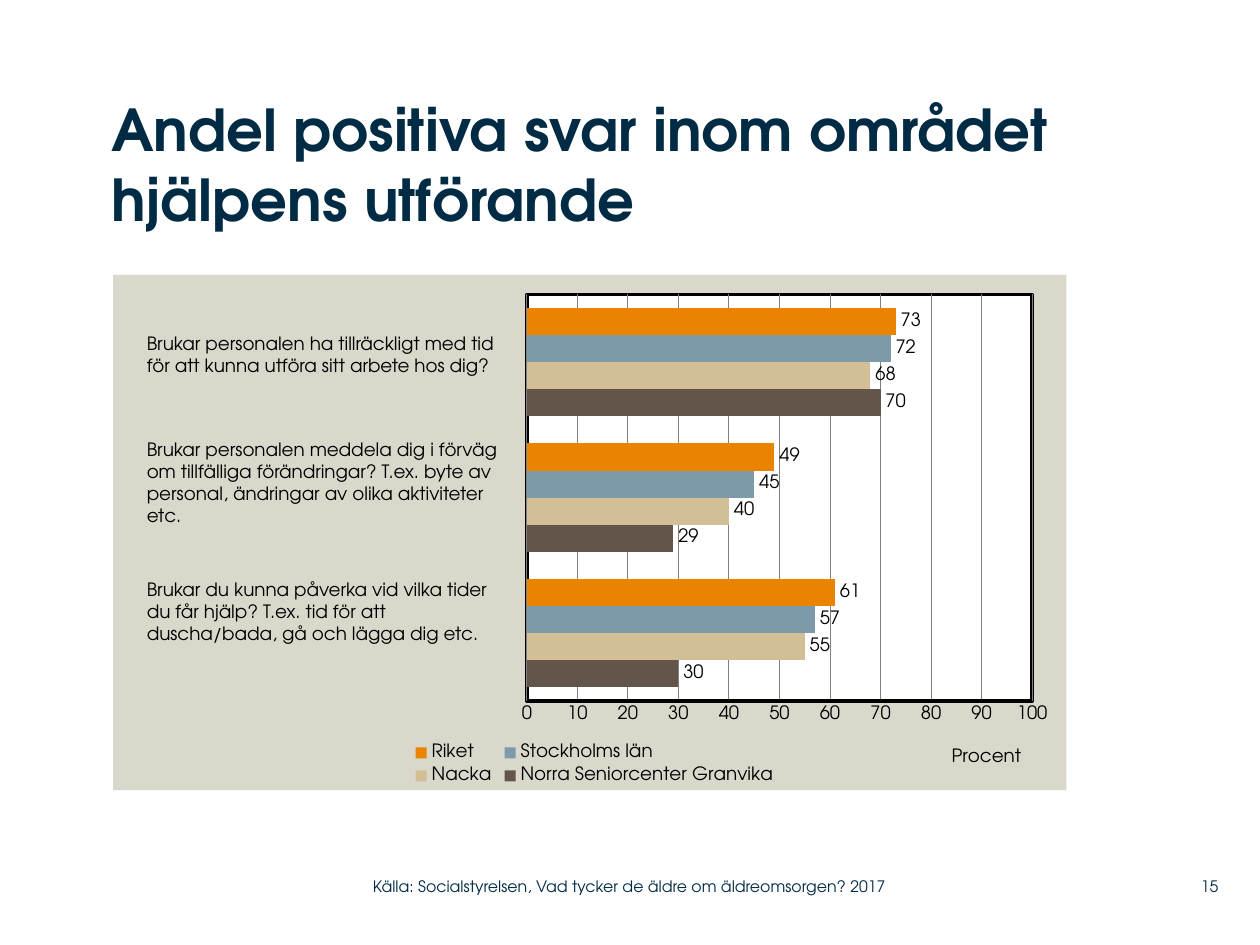
from lxml import etree
from pptx import Presentation
from pptx.chart.data import CategoryChartData
from pptx.dml.color import RGBColor
from pptx.enum.chart import XL_CHART_TYPE, XL_LABEL_POSITION, XL_LEGEND_POSITION, XL_TICK_MARK
from pptx.enum.text import MSO_ANCHOR, PP_ALIGN
from pptx.oxml import parse_xml
from pptx.oxml.ns import nsdecls, qn
from pptx.util import Cm, Pt

FONT = "TeX Gyre Adventor"
COLORS = {
    "navy": "002B45", "black": "000000", "white": "FFFFFF", "panel": "DAD7CB",
    "grid": "808080", "brown": "635549", "sand": "D3BF96", "blue": "7D9AAA",
    "orange": "E98300",
}
TITLE = "Andel positiva svar inom området hjälpens utförande"
CATEGORIES = ["1", "2", "3"]
SERIES = [
    ("Norra Seniorcenter Granvika", (30, 29, 70), "brown"),
    ("Nacka", (55, 40, 68), "sand"),
    ("Stockholms län", (57, 45, 72), "blue"),
    ("Riket", (61, 49, 73), "orange"),
]
QUESTIONS = [
    ["Brukar personalen ha tillräckligt med tid",
     "för att kunna utföra sitt arbete hos dig?"],
    ["Brukar personalen meddela dig i förväg om tillfälliga förändringar? T.ex. "
     "byte av personal, ändringar av olika aktiviteter etc."],
    ["Brukar du kunna påverka vid vilka tider",
     "du får hjälp? T.ex. tid för att",
     "duscha/bada, gå och lägga dig etc."],
]
QUESTION_HEIGHTS = [1.14, 2.06, 1.6]
QUESTION_CENTER, QUESTION_STEP = 7.15, 2.59
# Text, left, width, alignment
FOOTERS = [
    ("15", 23.37, 1.19, PP_ALIGN.RIGHT),
    ("Källa: Socialstyrelsen, Vad tycker de äldre om äldreomsorgen? 2017",
     7.52, 11.25, PP_ALIGN.LEFT),
]


def rgb(name):
    return RGBColor.from_string(COLORS[name])


def style_font(font, size, color, bold=False):
    font.name, font.size, font.bold = FONT, Pt(size), bold
    font.color.rgb = rgb(color)


def set_layout(element, index, x, y, width=None, height=None, inner=False):
    """Place a chart part by fractions of the chart, as child number index."""
    for old in element.findall(qn("c:layout")):
        element.remove(old)
    layout = etree.Element(qn("c:layout"))
    manual = etree.SubElement(layout, qn("c:manualLayout"))
    values = [("layoutTarget", "inner" if inner else None), ("xMode", "edge"),
              ("yMode", "edge"), ("x", x), ("y", y), ("w", width), ("h", height)]
    for tag, value in values:
        if value is not None:
            etree.SubElement(manual, qn(f"c:{tag}")).set("val", str(value))
    element.insert(index, layout)


def shape_properties(fill, line=None):
    outline = (f'<a:ln w="{Pt(2)}"><a:solidFill><a:srgbClr val="{COLORS[line]}"/>'
               "</a:solidFill></a:ln>" if line else "<a:ln><a:noFill/></a:ln>")
    return parse_xml(f'<c:spPr {nsdecls("c", "a")}><a:solidFill><a:srgbClr '
                     f'val="{COLORS[fill]}"/></a:solidFill>{outline}</c:spPr>')


def add_text(slide, paragraphs, left, top, width, height, size, color,
             alignment=PP_ALIGN.LEFT):
    box = slide.shapes.add_textbox(Cm(left), Cm(top), Cm(width), Cm(height))
    frame = box.text_frame
    frame.word_wrap = True
    frame.text = "\n".join(paragraphs)
    for paragraph in frame.paragraphs:
        paragraph.alignment = alignment
        style_font(paragraph.font, size, color)
    return frame


def remove_margins(frame):
    frame.margin_left = frame.margin_right = frame.margin_top = frame.margin_bottom = 0


def add_title(slide):
    title = slide.shapes.title
    title.left, title.top, title.width, title.height = Cm(2.24), Cm(1.9), Cm(19.3), Cm(3.6)
    frame = title.text_frame
    frame.text = TITLE
    frame.word_wrap = True
    frame.vertical_anchor = MSO_ANCHOR.TOP
    remove_margins(frame)
    paragraph = frame.paragraphs[0]
    paragraph.alignment = PP_ALIGN.LEFT
    style_font(paragraph.font, 33, "navy", bold=True)


def add_answer_chart(slide):
    data = CategoryChartData()
    data.categories = CATEGORIES
    for name, values, _ in SERIES:
        data.add_series(name, values)
    chart = slide.shapes.add_chart(XL_CHART_TYPE.BAR_CLUSTERED, Cm(2.28), Cm(5.54),
                                   Cm(19.22), Cm(10.39), data).chart
    style_font(chart.font, 10.5, "black")
    chart.has_title = False

    plot = chart.plots[0]
    plot.gap_width, plot.overlap = 100, 0
    plot.vary_by_categories = False
    for series, (_, _, color) in zip(plot.series, SERIES):
        series.format.fill.solid()
        series.format.fill.fore_color.rgb = rgb(color)
        labels = series.data_labels
        labels.show_value = True
        labels.position = XL_LABEL_POSITION.OUTSIDE_END
        style_font(labels.font, 10.5, "black")

    chart.category_axis.visible = False
    axis = chart.value_axis
    axis.minimum_scale, axis.maximum_scale, axis.major_unit = 0, 100, 10
    axis.major_tick_mark = axis.minor_tick_mark = XL_TICK_MARK.NONE
    axis.format.line.color.rgb = rgb("black")
    axis.format.line.width = Pt(2)
    axis.major_gridlines.format.line.color.rgb = rgb("grid")
    axis.major_gridlines.format.line.width = Pt(0.5)
    style_font(axis.tick_labels.font, 10.5, "black")
    axis_title = axis.axis_title
    axis_title.text_frame.text = "Procent"
    style_font(axis_title.text_frame.paragraphs[0].font, 10.5, "black")
    set_layout(axis_title._element, 1, 0.876, 0.91)

    chart.has_legend = True
    legend = chart.legend
    legend.position = XL_LEGEND_POSITION.BOTTOM
    legend.include_in_layout = False
    style_font(legend.font, 10.5, "black")
    set_layout(legend._element, 1, 0.31, 0.9, 0.39, 0.1)

    chart_element = chart._chartSpace.find(qn("c:chart"))
    plot_area = chart_element.find(qn("c:plotArea"))
    set_layout(plot_area, 0, 0.434, 0.038, 0.53, 0.789, inner=True)
    plot_area.append(shape_properties("white", "black"))
    chart_element.addnext(shape_properties("panel"))


def main():
    presentation = Presentation()
    presentation.slide_width, presentation.slide_height = Cm(25.4), Cm(19.05)
    slide = presentation.slides.add_slide(presentation.slide_layouts[5])
    add_answer_chart(slide)
    add_title(slide)
    for row, (lines, height) in enumerate(zip(QUESTIONS, QUESTION_HEIGHTS)):
        top = QUESTION_CENTER + row * QUESTION_STEP - height / 2
        add_text(slide, lines, 2.71, top, 7.6, height, 10.5, "black")
    for text, left, width, alignment in FOOTERS:
        frame = add_text(slide, [text], left, 17.5, width, 0.74, 9, "navy", alignment)
        frame.vertical_anchor = MSO_ANCHOR.MIDDLE
        remove_margins(frame)
    presentation.save("out.pptx")


if __name__ == "__main__":
    main()
